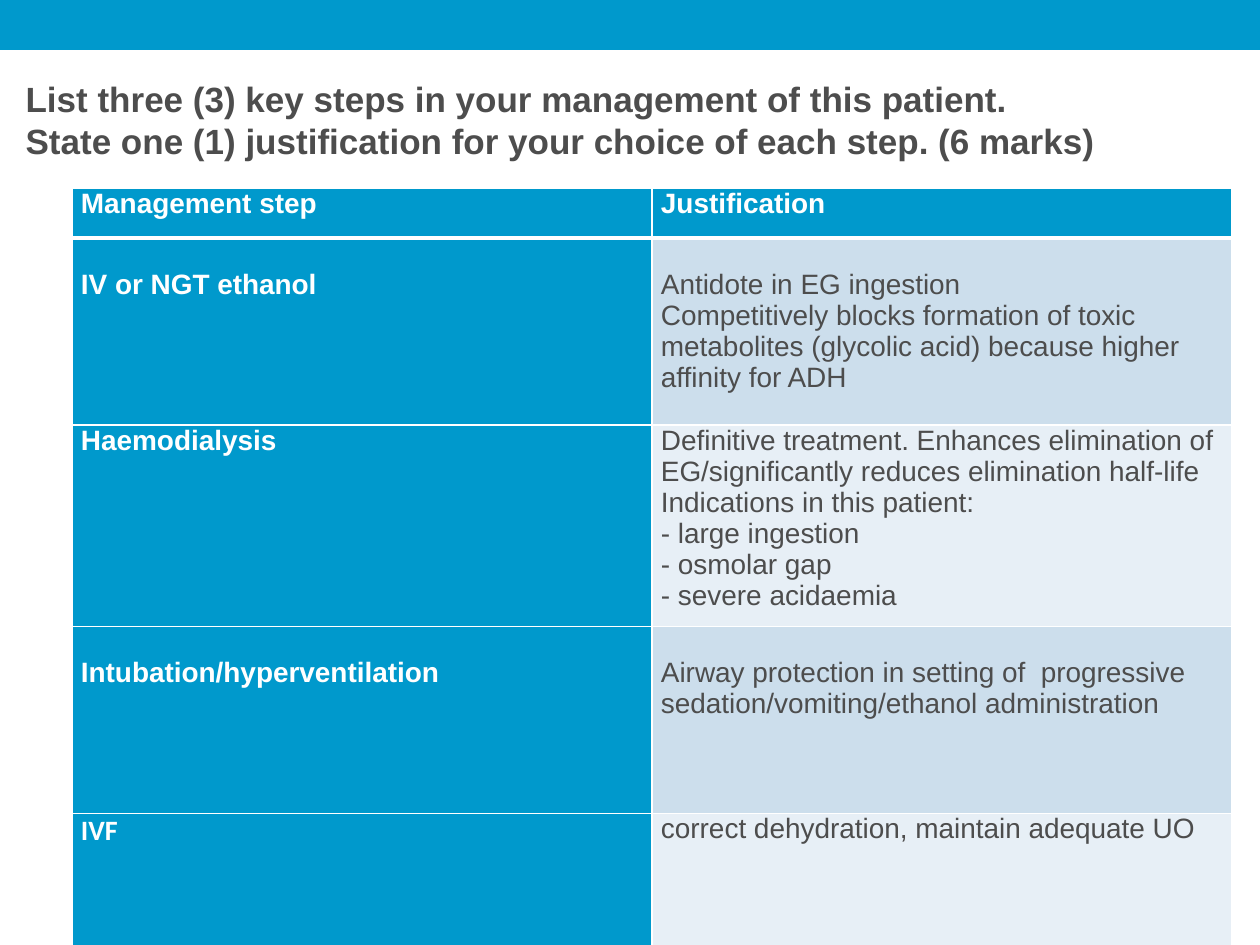
from dataclasses import dataclass

from lxml import etree
from pptx import Presentation, util as u
from pptx.dml.color import RGBColor
from pptx.enum import shapes, text
from pptx.oxml import ns

EMU_PER_PX = 914400 / 126
BLUE = RGBColor(0x00, 0x99, 0xCC)
WHITE = RGBColor(0xFF, 0xFF, 0xFF)
GREY = RGBColor(0x4D, 0x4D, 0x4D)
BAND_DARK = RGBColor(0xCC, 0xDE, 0xEC)
BAND_LIGHT = RGBColor(0xE7, 0xEF, 0xF6)
LINE_HEIGHT = 31
CELL_INSET = 9
COLUMN_WIDTH = 580


@dataclass
class ManagementRow:
    step: str
    justification: str
    height: int
    top_inset: int = 0
    step_font: str = "Arial"


HEADER = ManagementRow("Management step", "Justification", 50)
STEPS = [
    ManagementRow(
        "IV or NGT ethanol",
        "Antidote in EG ingestion\n"
        "Competitively blocks formation of toxic metabolites (glycolic acid) "
        "because higher affinity for ADH",
        187, LINE_HEIGHT),
    ManagementRow(
        "Haemodialysis",
        "Definitive treatment. Enhances elimination of EG/significantly "
        "reduces elimination half-life\n"
        "Indications in this patient:\n"
        "- large ingestion\n- osmolar gap\n- severe acidaemia",
        187),
    ManagementRow(
        "Intubation/hyperventilation",
        "Airway protection in setting of  progressive "
        "sedation/vomiting/ethanol administration",
        187, LINE_HEIGHT),
    ManagementRow("IVF", "correct dehydration, maintain adequate UO", 180,
                  step_font="Calibri"),
]
TITLE = ("List three (3) key steps in your management of this patient.\n"
         "State one (1) justification for your choice of each step. (6 marks)")


def px(length: int) -> int:
    return round(length * EMU_PER_PX)


def format_text(text_frame, size: int, color: RGBColor, bold: bool,
                font_name: str = "Arial") -> None:
    for paragraph in text_frame.paragraphs:
        paragraph.alignment = text.PP_ALIGN.LEFT
        for run in paragraph.runs:
            run.font.size = u.Pt(size)
            run.font.name = font_name
            run.font.bold = bold
            run.font.color.rgb = color


def add_borders(cell, bottom_width: int) -> None:
    properties = cell._tc.get_or_add_tcPr()
    widths = {"lnL": 1, "lnR": 1, "lnT": 1, "lnB": bottom_width}
    for position, (side, width) in enumerate(widths.items()):
        line = etree.Element(ns.qn(f"a:{side}"), w=str(u.Pt(width)))
        fill = etree.SubElement(line, ns.qn("a:solidFill"))
        etree.SubElement(fill, ns.qn("a:srgbClr"), val=str(WHITE))
        properties.insert(position, line)


def fill_cell(cell, content: str, row: ManagementRow, fill: RGBColor,
              color: RGBColor, bold: bool, font_name: str = "Arial",
              bottom_width: int = 1) -> None:
    cell.text_frame.text = content
    format_text(cell.text_frame, 16, color, bold, font_name)
    cell.margin_left = cell.margin_right = px(CELL_INSET)
    cell.margin_top, cell.margin_bottom = px(row.top_inset), 0
    cell.fill.solid()
    cell.fill.fore_color.rgb = fill
    add_borders(cell, bottom_width)


def add_top_bar(slide) -> None:
    bar = slide.shapes.add_shape(
        shapes.MSO_SHAPE.RECTANGLE, 0, 0, px(1260), px(50))
    bar.shadow.inherit = False
    bar.fill.solid()
    bar.fill.fore_color.rgb = BLUE
    bar.line.fill.background()


def place_title(slide) -> None:
    title = slide.shapes.title
    title.left, title.top = px(13), px(71)
    title.width, title.height = px(1218), px(97)
    title.text_frame.text = TITLE
    title.text_frame.word_wrap = True
    title.text_frame.auto_size = text.MSO_AUTO_SIZE.SHAPE_TO_FIT_TEXT
    title.text_frame.vertical_anchor = text.MSO_ANCHOR.MIDDLE
    format_text(title.text_frame, 20, GREY, True)


def add_management_table(slide) -> None:
    rows = [HEADER, *STEPS]
    table = slide.shapes.add_table(
        len(rows), 2, px(72), px(188), px(2 * COLUMN_WIDTH),
        px(sum(row.height for row in rows))).table
    for column in table.columns:
        column.width = px(COLUMN_WIDTH)
    for index, row in enumerate(rows):
        table.rows[index].height = px(row.height)
        step, justification = table.cell(index, 0), table.cell(index, 1)
        if row is HEADER:
            for cell, content in ((step, row.step),
                                  (justification, row.justification)):
                fill_cell(cell, content, row, BLUE, WHITE, True,
                          bottom_width=3)
        else:
            band = BAND_DARK if index % 2 else BAND_LIGHT
            fill_cell(step, row.step, row, BLUE, WHITE, True, row.step_font)
            fill_cell(justification, row.justification, row, band, GREY, False)


def main() -> None:
    presentation = Presentation()
    presentation.slide_width, presentation.slide_height = px(1260), px(945)
    slide = presentation.slides.add_slide(presentation.slide_layouts[5])
    add_top_bar(slide)
    place_title(slide)
    add_management_table(slide)
    presentation.save("out.pptx")


if __name__ == "__main__":
    main()
